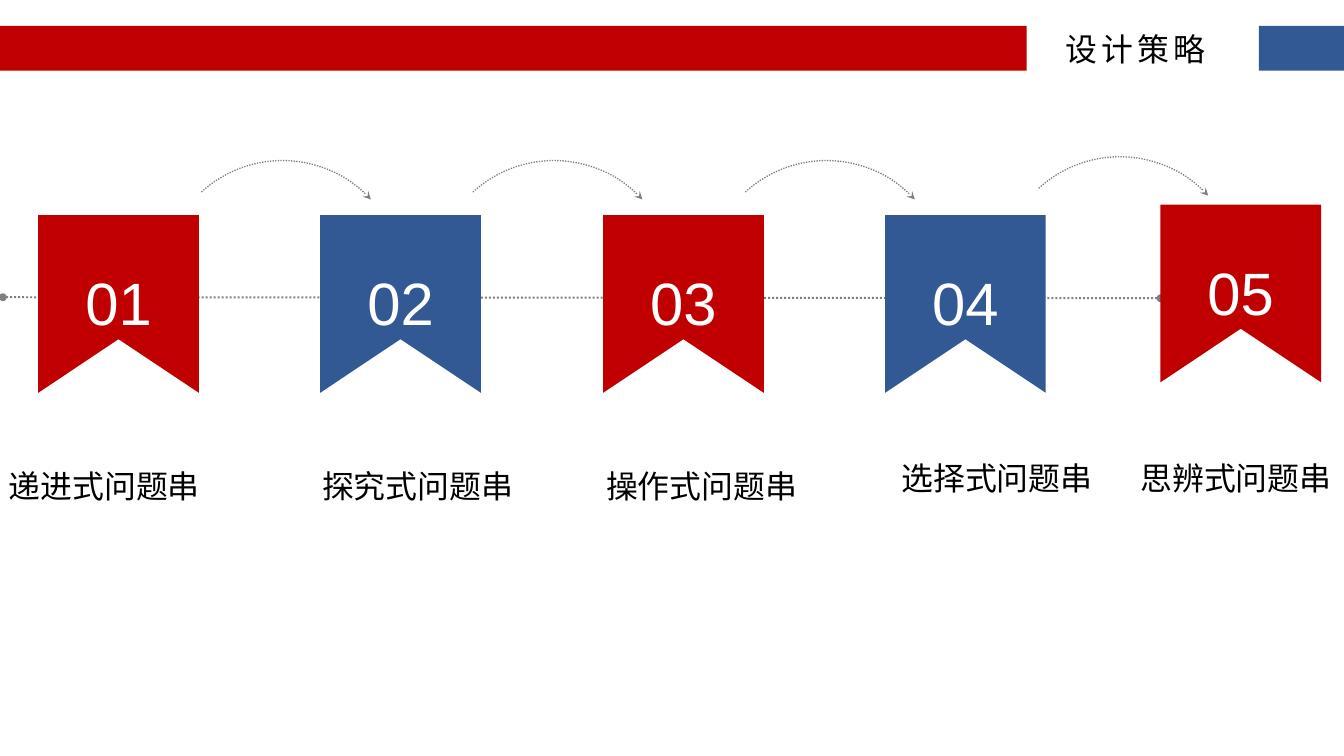
from dataclasses import dataclass

from lxml import etree
from pptx import Presentation
from pptx import util as u
from pptx.dml.color import RGBColor
from pptx.enum import dml, shapes, text
from pptx.oxml import ns


@dataclass(frozen=True)
class Theme:
    red: RGBColor = RGBColor.from_string("C00000")
    blue: RGBColor = RGBColor.from_string("325994")
    gray: RGBColor = RGBColor.from_string("808080")
    white: RGBColor = RGBColor.from_string("FFFFFF")
    black: RGBColor = RGBColor.from_string("000000")
    number_font: str = "Arial"
    label_font: str = "Noto Sans CJK SC"
    title_font: str = "Noto Sans CJK JP"
    number_size: int = 45
    label_size: int = 24


theme = Theme()
presentation = Presentation()
presentation.slide_width = u.Inches(14.06)
presentation.slide_height = u.Inches(7.91)
slide = presentation.slides.add_slide(presentation.slide_layouts[6])


def add_text(content, left, top, width, height, *, font, size, color,
             align=text.PP_ALIGN.CENTER, anchor=text.MSO_ANCHOR.MIDDLE,
             inset=(0, 0), line_spacing=1.0, letter_spacing=0, wrap=True):
    box = slide.shapes.add_textbox(*map(u.Inches, (left, top, width, height)))
    frame = box.text_frame
    frame.word_wrap = wrap
    frame.vertical_anchor = anchor
    frame.margin_left = frame.margin_right = u.Inches(inset[0])
    frame.margin_top = frame.margin_bottom = u.Inches(inset[1])
    paragraph = frame.paragraphs[0]
    paragraph.alignment = align
    paragraph.line_spacing = line_spacing
    run = paragraph.add_run()
    run.text = content
    run.font.name = font
    run.font.size = u.Pt(size)
    run.font.color.rgb = color
    properties = run.font._element
    etree.SubElement(properties, ns.qn("a:ea")).set("typeface", font)
    if letter_spacing:
        properties.set("spc", str(letter_spacing * 100))


def style_dotted(line, width, **ends):
    line.color.rgb = theme.gray
    line.width = u.Pt(width)
    line.dash_style = dml.MSO_LINE.ROUND_DOT
    for end, kind in ends.items():
        etree.SubElement(line._get_or_add_ln(), ns.qn(f"a:{end}")).set("type", kind)


timeline = slide.shapes.add_connector(
    shapes.MSO_CONNECTOR.STRAIGHT, *map(u.Inches, (12.14, 3.12, 0.03, 3.11)))
style_dotted(timeline.line, 1.5, headEnd="oval", tailEnd="oval")
etree.SubElement(timeline._element.spPr, ns.qn("a:effectLst"))

ribbon_width, ribbon_height, notch_height = 1.68, 1.86, 1.3
steps = [
    ("递进式问题串", 0.4, 2.25, -0.26, 4.51),
    ("探究式问题串", 3.35, 2.25, 3.02, 4.51),
    ("操作式问题串", 6.31, 2.25, 5.99, 4.51),
    ("选择式问题串", 9.26, 2.25, 9.08, 4.43),
    ("思辨式问题串", 12.14, 2.14, 11.58, 4.43),
]
for number, (label, left, top, label_left, label_top) in enumerate(steps, 1):
    right, bottom = left + ribbon_width, top + ribbon_height
    outline = [(right, top), (right, bottom),
               (left + ribbon_width / 2, top + notch_height), (left, bottom)]
    builder = slide.shapes.build_freeform(u.Inches(left), u.Inches(top))
    builder.add_line_segments([(u.Inches(x), u.Inches(y)) for x, y in outline])
    ribbon = builder.convert_to_shape()
    ribbon.shadow.inherit = False
    ribbon.fill.solid()
    ribbon.fill.fore_color.rgb = theme.red if number % 2 else theme.blue
    ribbon.line.fill.background()
    add_text(f"{number:02}", left + 0.39, top + 0.26, 0.9, 1.08,
             font=theme.number_font, size=theme.number_size, color=theme.white,
             anchor=text.MSO_ANCHOR.TOP, inset=(0.1, 0.05),
             line_spacing=1.3, wrap=False)
    add_text(label, label_left, label_top, 2.7, 1.14,
             font=theme.label_font, size=theme.label_size, color=theme.black)

for left, top in [(1.7, 1.68), (4.54, 1.68), (7.39, 1.68), (10.46, 1.64)]:
    arc = slide.shapes.add_shape(
        shapes.MSO_SHAPE.ARC, *map(u.Inches, (left, top, 2.51, 2.51)))
    arc.rotation = 317.5
    arc.shadow.inherit = False
    arc.fill.background()
    style_dotted(arc.line, 1, tailEnd="stealth")

for left, width, color in [(0, 10.74, theme.red), (13.17, 0.89, theme.blue)]:
    bar = slide.shapes.add_shape(
        shapes.MSO_SHAPE.RECTANGLE, *map(u.Inches, (left, 0.27, width, 0.47)))
    bar.shadow.inherit = False
    bar.fill.solid()
    bar.fill.fore_color.rgb = color
    bar.line.fill.background()

add_text("设计策略", 11.05, 0.25, 2.67, 0.58,
         font=theme.title_font, size=theme.label_size, color=theme.black,
         align=text.PP_ALIGN.LEFT, inset=(0.1, 0.05),
         line_spacing=0.9, letter_spacing=3)

presentation.save("out.pptx")
